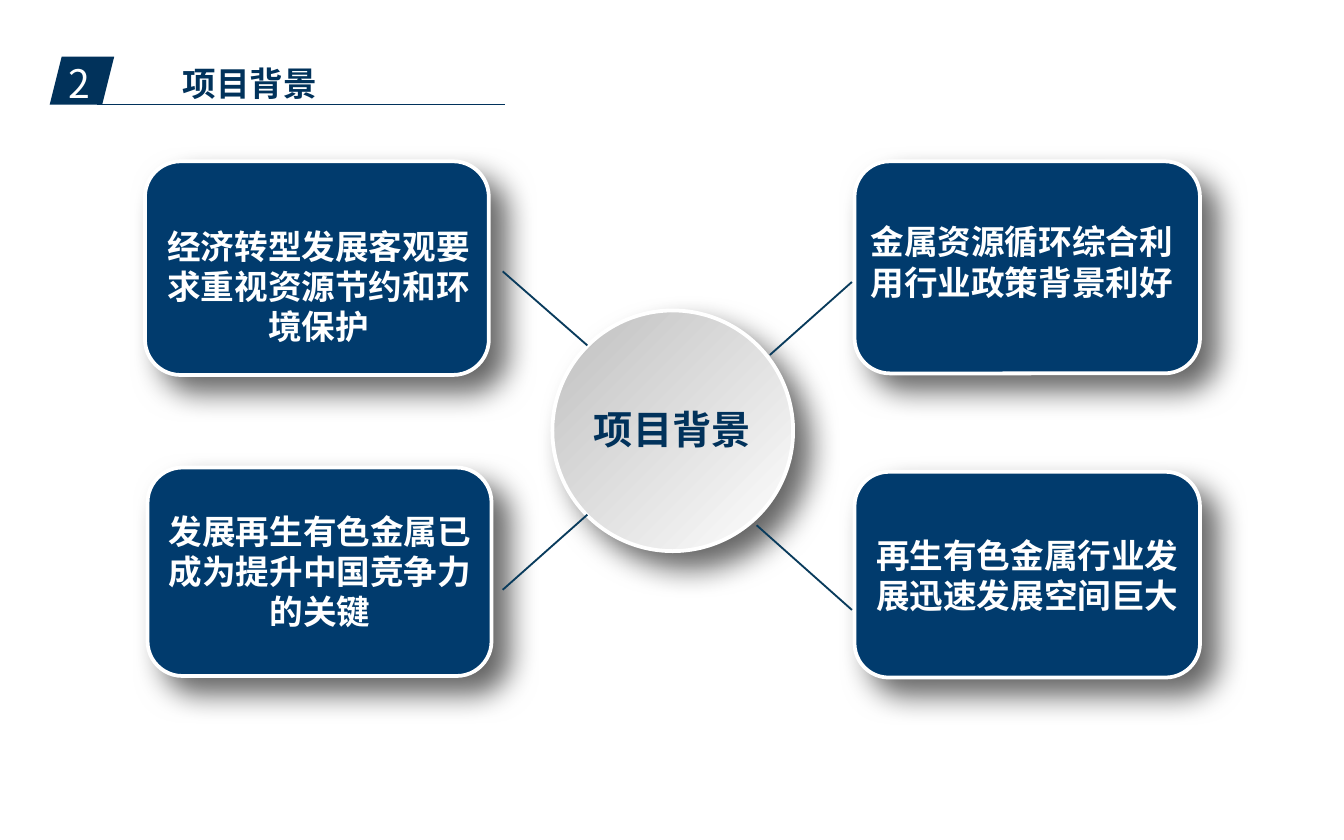
import pptx
import pptx.dml.color
import pptx.enum.shapes
import pptx.enum.text
import pptx.oxml
import pptx.oxml.ns
import pptx.util
from lxml import etree

Cm, Pt = pptx.util.Cm, pptx.util.Pt
SHAPE = pptx.enum.shapes.MSO_SHAPE
ALIGN = pptx.enum.text.PP_ALIGN
ANCHOR = pptx.enum.text.MSO_ANCHOR
RGB = pptx.dml.color.RGBColor.from_string
qn = pptx.oxml.ns.qn

FONT = "Noto Sans CJK SC"
COLORS = {"card": "013B6D", "navy": "01325B", "spoke": "093B5C",
          "white": "FFFFFF", "grey": "BFBFBF"}
SHADOW = (
    '<a:effectLst xmlns:a="http://schemas.openxmlformats.org/drawingml/2006/main">'
    '<a:outerShdw blurRad="203200" dist="152400" dir="2700000" algn="tl" rotWithShape="0">'
    '<a:srgbClr val="000000"><a:alpha val="60000"/></a:srgbClr>'
    '</a:outerShdw></a:effectLst>')


def write(box, text, size=18, color="white", bold=True, align=ALIGN.CENTER,
          anchor=ANCHOR.TOP, wrap=True, inset=None):
    frame = box.text_frame
    frame.auto_size = pptx.enum.text.MSO_AUTO_SIZE.NONE
    frame.word_wrap = wrap
    frame.vertical_anchor = anchor
    if inset is not None:
        frame.margin_left = frame.margin_right = inset
        frame.margin_top = frame.margin_bottom = inset
    paragraph = frame.paragraphs[0]
    paragraph.alignment = align
    paragraph.line_spacing = Pt(size * 1.2)
    run = paragraph.add_run()
    run.text = text
    run.font.size = Pt(size)
    run.font.bold = bold
    run.font.color.rgb = RGB(COLORS[color])
    run.font.name = FONT
    # East Asian text takes its own typeface
    etree.SubElement(run.font._element, qn("a:ea"), typeface=FONT)


def raise_up(shape):
    """White rim and soft shadow to the lower right."""
    shape.line.color.rgb = RGB(COLORS["white"])
    shape.line.width = Pt(2)
    shape.shadow.inherit = False
    properties = shape._element.spPr
    properties.replace(properties.find(qn("a:effectLst")), pptx.oxml.parse_xml(SHADOW))


deck = pptx.Presentation()
deck.slide_width, deck.slide_height = Cm(25.4), Cm(15.88)
slide = deck.slides.add_slide(deck.slide_layouts[5])
shapes = slide.shapes

# Heading
heading = shapes.title
heading.left, heading.top, heading.width, heading.height = Cm(3.2), Cm(1.07), Cm(3.05), Cm(1.02)
write(heading, "项目背景", color="navy", align=ALIGN.LEFT, wrap=False)

# Four reasons: card left, top, width, height; text left, top, width, height
reasons = [
    ("经济转型发展客观要求重视资源节约和环境保护",
     (2.74, 3.05, 6.5, 4.04), (2.77, 4.14, 6.5, 2.57)),
    ("发展再生有色金属已成为提升中国竞争力的关键",
     (2.79, 8.84, 6.5, 3.94), (2.82, 9.53, 6.45, 2.57)),
    ("金属资源循环综合利用行业政策背景利好",
     (16.15, 3.05, 6.53, 4.01), (16.15, 4.06, 6.32, 1.8)),
    ("再生有色金属行业发展迅速发展空间巨大",
     (16.15, 8.92, 6.53, 3.89), (16.15, 9.98, 6.53, 1.78)),
]
for reason, card_place, text_place in reasons:
    card = shapes.add_shape(SHAPE.ROUNDED_RECTANGLE, *map(Cm, card_place))
    card.fill.solid()
    card.fill.fore_color.rgb = RGB(COLORS["card"])
    raise_up(card)
    write(shapes.add_textbox(*map(Cm, text_place)), reason)

# Hub, shaded from grey at upper left to white at lower right
hub = shapes.add_shape(SHAPE.OVAL, Cm(10.44), Cm(5.87), Cm(4.55), Cm(4.55))
hub.fill.gradient()
hub.fill.gradient_angle = 135
for stop, position, color in zip(hub.fill.gradient_stops, (0, 1), ("white", "grey")):
    stop.position = position
    stop.color.rgb = RGB(COLORS[color])
raise_up(hub)

# Spokes between cards and hub, then the rule under the heading
lines = [
    (9.5, 5.13, 11.1, 6.53, "spoke", 1),
    (16.1, 11.53, 14.3, 9.93, "spoke", 1),
    (9.5, 11.15, 11.1, 9.73, "spoke", 1),
    (16.1, 5.33, 14.55, 6.71, "spoke", 1),
    (1.83, 1.98, 9.55, 1.98, "navy", 0.75),
]
for *ends, color, width in lines:
    line = shapes.add_connector(pptx.enum.shapes.MSO_CONNECTOR.STRAIGHT, *map(Cm, ends))
    line.line.color.rgb = RGB(COLORS[color])
    line.line.width = Pt(width)
    etree.SubElement(line._element.spPr, qn("a:effectLst"))

# Hub label
hub_label = shapes.add_textbox(Cm(10.9), Cm(7.67), Cm(3.61), Cm(0.89))
write(hub_label, "项目背景", size=21, color="navy", anchor=ANCHOR.MIDDLE, inset=0)

# Section number on its slanted tab
tab = shapes.add_shape(SHAPE.PARALLELOGRAM, Cm(0.94), Cm(1.07), Cm(1.22), Cm(0.91))
tab.fill.solid()
tab.fill.fore_color.rgb = RGB(COLORS["navy"])
tab.line.fill.background()
tab.shadow.inherit = False
number = shapes.add_textbox(Cm(0.89), Cm(0.99), Cm(1.22), Cm(1.14))
write(number, "2", size=21, bold=False)

deck.save("out.pptx")
